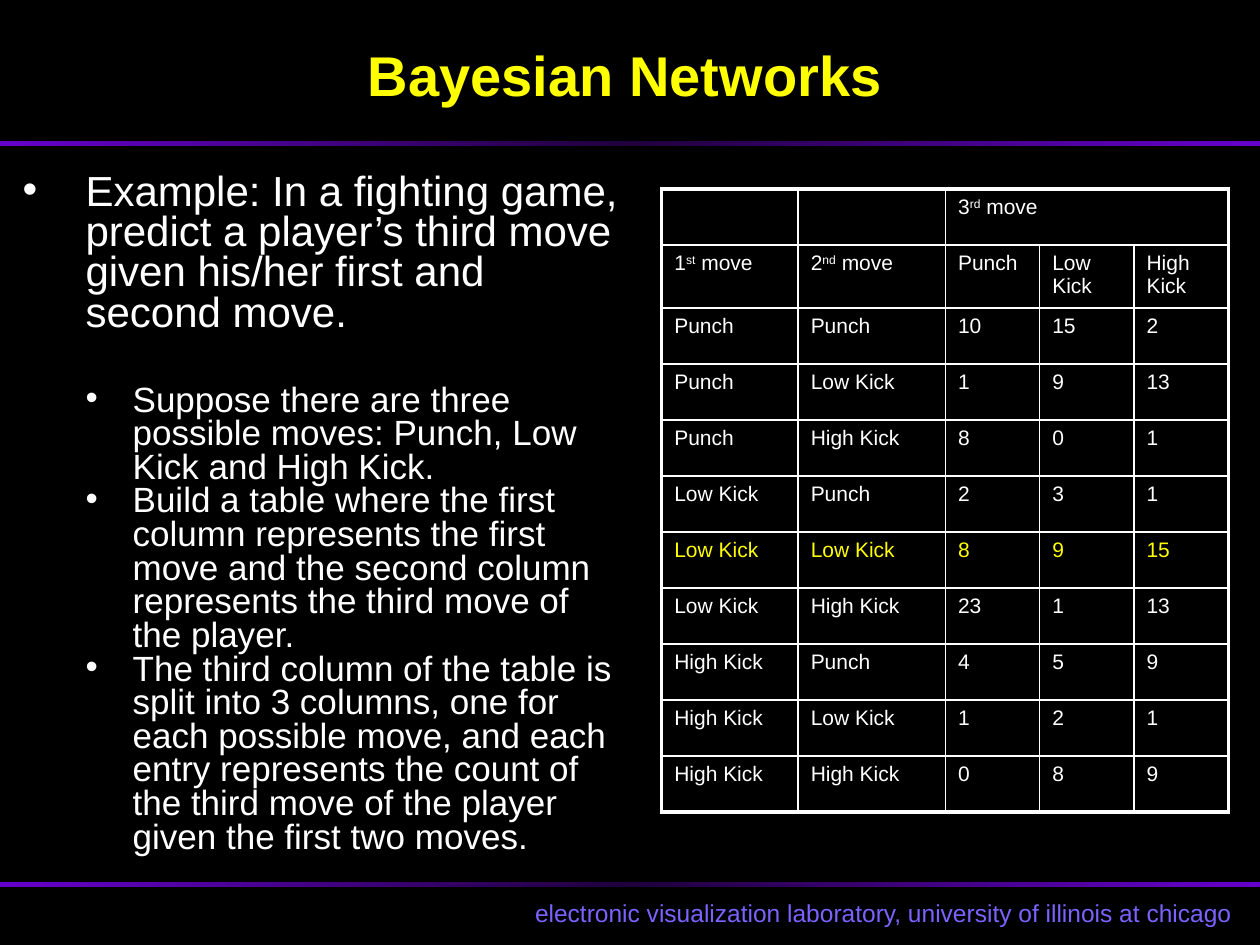
"""Build the Bayesian Networks slide with its table of third-move counts."""
import copy
import dataclasses

import pptx
import pptx.dml.color
import pptx.enum.shapes
import pptx.enum.text
import pptx.oxml
import pptx.oxml.ns
import pptx.util
from pptx.util import Cm, Pt


@dataclasses.dataclass(frozen=True)
class Theme:
    font: str = "Arial"
    background: str = "000000"
    body: str = "FFFFFF"
    accent: str = "FFFF00"
    credit: str = "7C62FF"
    rule_stops: tuple = ((0, "6600CC"), (0.5, "1F003D"), (1, "6600CC"))
    title_size: int = 32
    example_size: int = 24
    step_size: int = 20
    credit_size: int = 14
    table_size: int = 12
    outer_line: float = 2.25
    inner_line: float = 1


THEME = Theme()
EXAMPLE = ("Example: In a fighting game, predict a player’s third move "
           "given his/her first and second move.")
STEPS = (
    "Suppose there are three possible moves: Punch, Low Kick and High Kick.",
    "Build a table where the first column represents the first move and the "
    "second column represents the third move of the player.",
    "The third column of the table is split into 3 columns, one for each "
    "possible move, and each entry represents the count of the third move of "
    "the player given the first two moves.",
)
MOVES = ("Punch", "Low Kick", "High Kick")
COUNTS = ((10, 15, 2), (1, 9, 13), (8, 0, 1),
          (2, 3, 1), (8, 9, 15), (23, 1, 13),
          (4, 5, 9), (1, 2, 1), (0, 8, 9))
HIGHLIGHTED_MOVES = ("Low Kick", "Low Kick")
COLUMN_WIDTHS = (2.75, 2.97, 1.9, 1.9, 1.9)
ROW_HEIGHT = 1.13


def rgb(value):
    return pptx.dml.color.RGBColor.from_string(value)


def place(shape, left, top, width, height):
    shape.left, shape.top = Cm(left), Cm(top)
    shape.width, shape.height = Cm(width), Cm(height)


def add_run(paragraph, text, size, color, bold=False, superscript=False):
    run = paragraph.add_run()
    run.text = text
    run.font.name = THEME.font
    run.font.size = Pt(size)
    run.font.bold = bold
    run.font.color.rgb = rgb(color)
    if superscript:
        run.font._element.set("baseline", "30000")


def add_bullet(paragraph, text, size, level, margin, hanging):
    paragraph.level = level
    properties = paragraph._p.get_or_add_pPr()
    properties.set("marL", str(Cm(margin)))
    properties.set("indent", str(-Cm(hanging)))
    for tag, attribute, value in (("a:buFont", "typeface", THEME.font),
                                  ("a:buChar", "char", "•")):
        bullet = pptx.oxml.parse_xml(f"<{tag} {pptx.oxml.ns.nsdecls('a')}/>")
        bullet.set(attribute, value)
        properties.append(bullet)
    paragraph.line_spacing = 0.8
    paragraph.space_before = Pt(0)
    add_run(paragraph, text, size, THEME.body)


def add_rule(slide, top, width):
    rule = slide.shapes.add_shape(
        pptx.enum.shapes.MSO_SHAPE.RECTANGLE, 0, Cm(top), width, Cm(0.1))
    rule.shadow.inherit = False
    rule.line.fill.background()
    rule.fill.gradient()
    rule.fill.gradient_angle = 0
    stop_list = rule._element.spPr.find(".//" + pptx.oxml.ns.qn("a:gsLst"))
    stop_list.append(copy.deepcopy(stop_list[-1]))
    for stop, (position, color) in zip(rule.fill.gradient_stops, THEME.rule_stops):
        stop.position = position
        stop.color.rgb = rgb(color)


def add_title(slide):
    title = slide.shapes.title
    place(title, 1.07, 0, 23.06, 2.97)
    title.text_frame.vertical_anchor = pptx.enum.text.MSO_ANCHOR.MIDDLE
    heading = title.text_frame.paragraphs[0]
    heading.alignment = pptx.enum.text.PP_ALIGN.CENTER
    add_run(heading, "Bayesian Networks", THEME.title_size, THEME.accent, bold=True)


def add_explanation(slide):
    explanation = slide.placeholders[1]
    place(explanation, 0.2, 3.38, 12.7, 13.97)
    frame = explanation.text_frame
    frame.auto_size = pptx.enum.text.MSO_AUTO_SIZE.NONE
    example = frame.paragraphs[0]
    add_bullet(example, EXAMPLE, THEME.example_size, 0, 1.27, 1.27)
    example.space_after = Pt(28.5)
    for step in STEPS:
        add_bullet(frame.add_paragraph(), step, THEME.step_size, 1, 2.22, 0.95)


def add_credit(slide):
    credit = slide.shapes.add_textbox(Cm(10.54), Cm(17.98), Cm(14.55), Cm(0.84))
    frame = credit.text_frame
    frame.word_wrap = False
    frame.auto_size = pptx.enum.text.MSO_AUTO_SIZE.SHAPE_TO_FIT_TEXT
    frame.margin_left = frame.margin_right = 0
    line = frame.paragraphs[0]
    line.alignment = pptx.enum.text.PP_ALIGN.CENTER
    add_run(line, "electronic visualization laboratory, university of illinois at chicago",
            THEME.credit_size, THEME.credit)


def add_borders(cell, outer_sides):
    properties = cell._tc.get_or_add_tcPr()
    for side in "LRTB":
        weight = THEME.outer_line if side in outer_sides else THEME.inner_line
        properties.append(pptx.oxml.parse_xml(
            f'<a:ln{side} {pptx.oxml.ns.nsdecls("a")} w="{Pt(weight)}">'
            f'<a:solidFill><a:srgbClr val="{THEME.body}"/></a:solidFill></a:ln{side}>'))


def fill_cell(cell, content, color, outer_sides):
    add_borders(cell, outer_sides)
    cell.fill.background()
    paragraph = cell.text_frame.paragraphs[0]
    parts = content if isinstance(content, tuple) else (content,)
    for index, part in enumerate(parts):
        if part:
            add_run(paragraph, part, THEME.table_size, color, superscript=index == 1)


def count_rows():
    headers = [("", "", ("3", "rd", " move"), "", ""),
               (("1", "st", " move"), ("2", "nd", " move"), *MOVES)]
    pairs = [(first, second) for first in MOVES for second in MOVES]
    return headers + [(*pair, *map(str, counts)) for pair, counts in zip(pairs, COUNTS)]


def add_count_table(slide):
    rows = count_rows()
    last_row, last_column = len(rows) - 1, len(COLUMN_WIDTHS) - 1
    counts = slide.shapes.add_table(
        len(rows), len(COLUMN_WIDTHS), Cm(13.34), Cm(3.81),
        Cm(sum(COLUMN_WIDTHS)), Cm(ROW_HEIGHT * len(rows))).table
    counts.first_row = counts.horz_banding = False
    for column, width in zip(counts.columns, COLUMN_WIDTHS):
        column.width = Cm(width)
    counts.cell(0, 2).merge(counts.cell(0, last_column))
    for row, contents in enumerate(rows):
        counts.rows[row].height = Cm(ROW_HEIGHT)
        color = THEME.accent if contents[:2] == HIGHLIGHTED_MOVES else THEME.body
        for column, content in enumerate(contents):
            cell = counts.cell(row, column)
            end_column = column + cell.span_width - 1 if cell.is_merge_origin else column
            edges = {"L": column == 0, "R": end_column == last_column,
                     "T": row == 0, "B": row == last_row}
            fill_cell(cell, content, color, [side for side in edges if edges[side]])


def main():
    deck = pptx.Presentation()
    deck.slide_width, deck.slide_height = Cm(25.4), Cm(19.05)
    slide = deck.slides.add_slide(deck.slide_layouts[1])
    slide.background.fill.solid()
    slide.background.fill.fore_color.rgb = rgb(THEME.background)
    for top in (2.84, 17.78):
        add_rule(slide, top, deck.slide_width)
    add_credit(slide)
    add_count_table(slide)
    add_explanation(slide)
    add_title(slide)
    deck.save("out.pptx")


if __name__ == "__main__":
    main()
